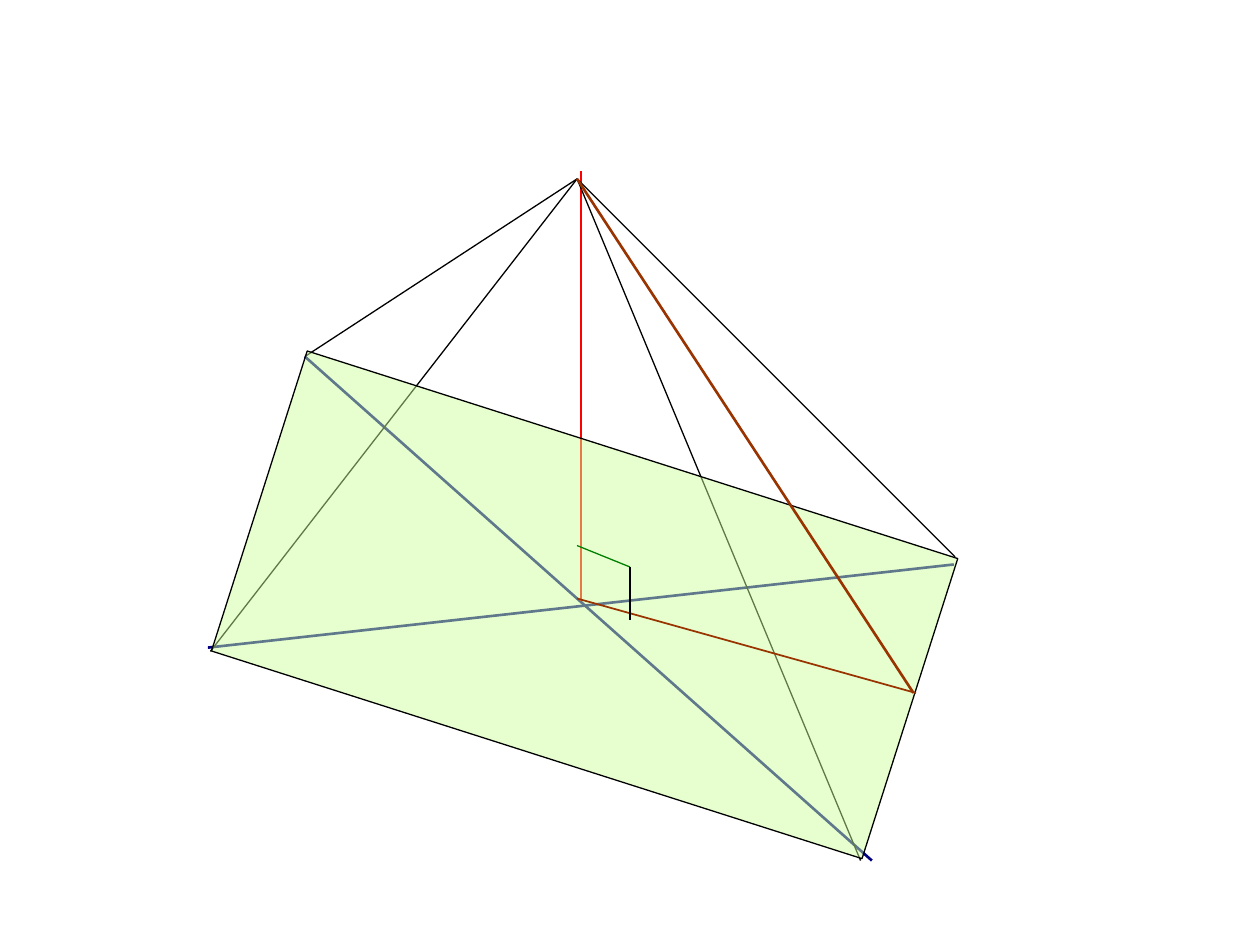
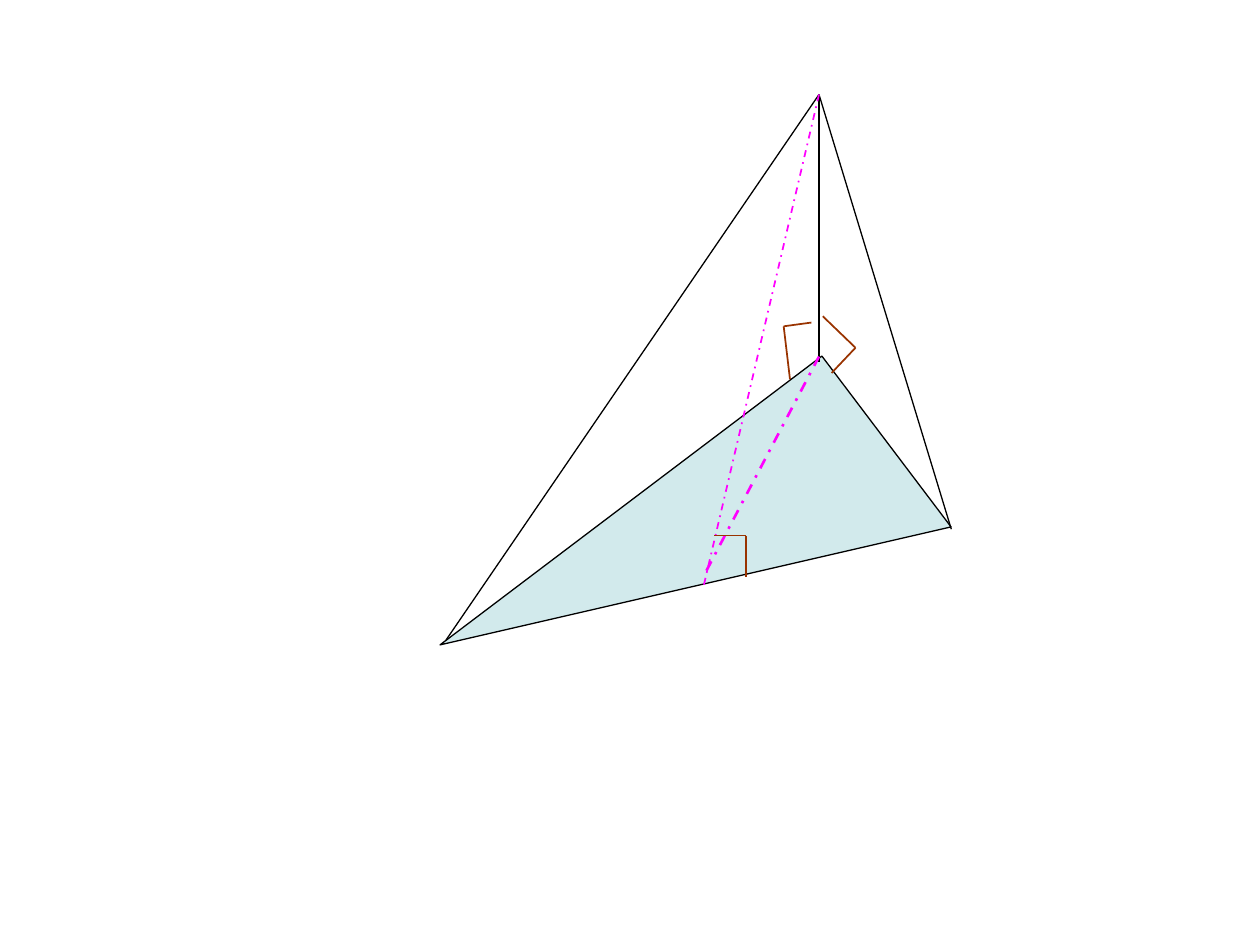
from itertools import pairwise

from lxml import etree
from pptx import Presentation
from pptx.dml.color import RGBColor
from pptx.enum import dml, shapes
from pptx.oxml.ns import qn
from pptx.util import Inches, Pt

COLORS = {
    "edge": "000000",
    "diagonal": "000080",
    "height": "FF0000",
    "slant": "993300",
    "mark": "008000",
    "median": "FF00FF",
    "green_base": "CCFF99",
    "blue_base": "BBE0E3",
}


def add_line(parent, start, end, color="edge", width=0.75, dash=None):
    ln = parent.add_connector(shapes.MSO_CONNECTOR.STRAIGHT,
                              *map(Inches, (*start, *end)))
    ln.line.color.rgb = RGBColor.from_string(COLORS[color])
    ln.line.width = Pt(width)
    if dash:
        ln.line.dash_style = dash
    etree.SubElement(ln._element.spPr, qn("a:effectLst"))


def add_base(parent, kind, box, rotation, color, opacity):
    """Add the rotated, see-through base of a pyramid; opacity in percent."""
    sp = parent.add_shape(kind, *map(Inches, box))
    sp.rotation = rotation
    sp.shadow.inherit = False
    sp.fill.solid()
    sp.fill.fore_color.rgb = RGBColor.from_string(COLORS[color])
    clr = sp._element.spPr.find(qn("a:solidFill"))[0]
    etree.SubElement(clr, qn("a:alpha"), val=str(opacity * 1000))
    sp.line.color.rgb = RGBColor.from_string(COLORS["edge"])
    sp.line.width = Pt(0.75)


prs = Presentation()
prs.slide_width, prs.slide_height = Inches(10), Inches(7.5)
blank = prs.slide_layouts[6]

# Slide 1: pyramid on a rectangular base
s = prs.slides.add_slide(blank).shapes
apex = (4.58, 1.42)
back_left = (2.42, 2.83)

add_line(s, (1.65, 5.14), (7.57, 4.48), "diagonal", 1.5)
add_line(s, back_left, (6.92, 6.83), "diagonal", 1.5)
add_line(s, (4.61, 1.36), (4.61, 4.77), "height", 1.5)
for corner in [(6.83, 6.83), (1.67, 5.17), (7.58, 4.42), back_left]:
    add_line(s, apex, corner)
add_base(s, shapes.MSO_SHAPE.RECTANGLE, (1.93, 3.55, 5.42, 2.5), 17.7,
         "green_base", 47)
add_line(s, apex, (7.25, 5.5), "slant", 1.5)
add_line(s, (4.58, 4.75), (7.27, 5.5), "slant", 1)

mark = s.add_group_shape().shapes
add_line(mark, (4.58, 4.33), (5, 4.5), "mark")
add_line(mark, (5, 4.5), (5, 4.92))

# Slide 2: pyramid on a right-angled triangle
s = prs.slides.add_slide(blank).shapes
apex = (6.5, 0.75)
dash_dot = dml.MSO_LINE.DASH_DOT

add_base(s, shapes.MSO_SHAPE.RIGHT_TRIANGLE, (3.62, 3.8, 3.8, 1.7), 142.9,
         "blue_base", 66)
for corner in [(6.5, 2.87), (7.55, 4.2), (3.54, 5.08)]:
    add_line(s, apex, corner)
add_line(s, apex, (5.58, 4.67), "median", 1, dash_dot)
add_line(s, (6.5, 2.83), (5.58, 4.58), "median", 1.5, dash_dot)

right_angles = [
    [(5.67, 4.25), (5.92, 4.25), (5.92, 4.58)],
    [(6.27, 3.01), (6.22, 2.59), (6.44, 2.56)],
    [(6.53, 2.51), (6.79, 2.76), (6.6, 2.96)],
]
for points in right_angles:
    mark = s.add_group_shape().shapes
    for start, end in pairwise(points):
        add_line(mark, start, end, "slant", 1)

prs.save("out.pptx")
